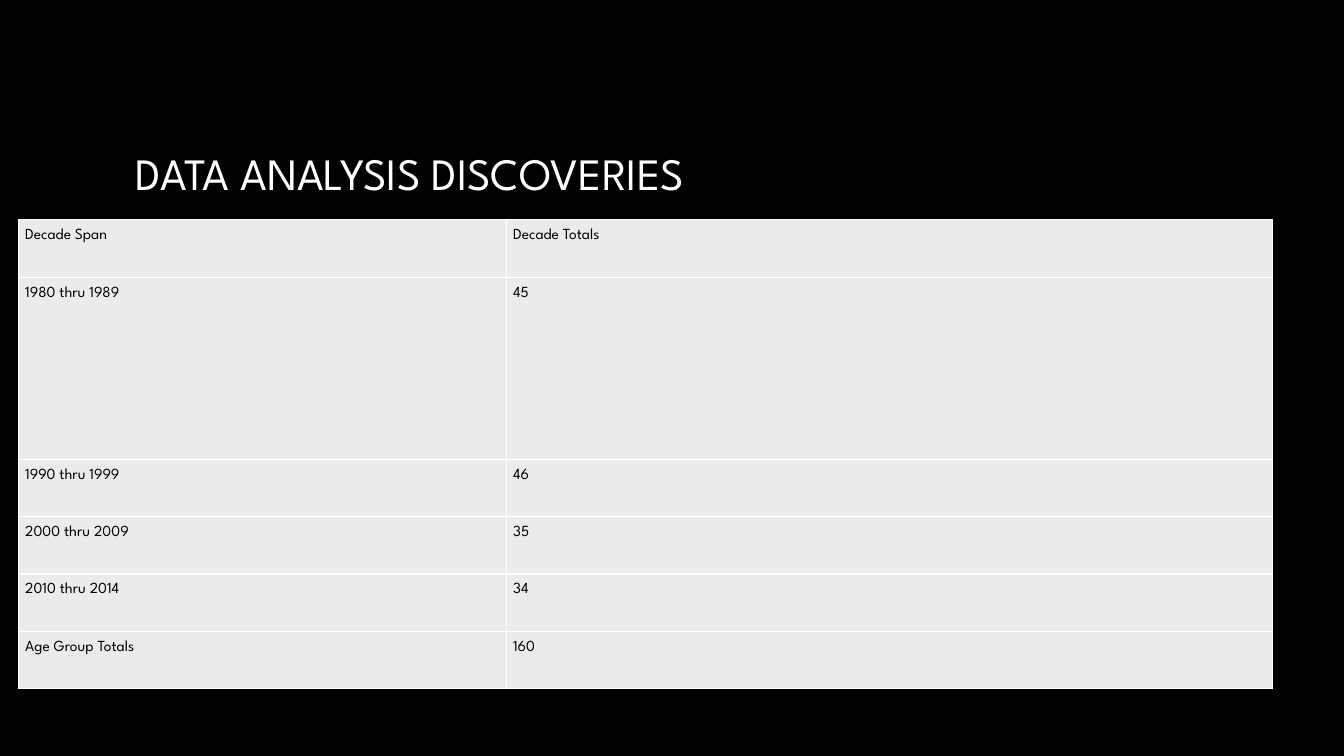
"""Build the data analysis discoveries slide with its table of decade totals."""
from dataclasses import dataclass

from lxml import etree
from pptx import Presentation
from pptx import util as u
from pptx.dml import color
from pptx.enum import text
from pptx.oxml import ns
from pptx.slide import Slide
from pptx.table import _Cell

BLACK = color.RGBColor(0x00, 0x00, 0x00)
WHITE = color.RGBColor(0xFF, 0xFF, 0xFF)
SILVER = color.RGBColor(0xA6, 0xA6, 0xA6)
CELL_GREY = color.RGBColor(0xEB, 0xEB, 0xEB)
FONT = "League Spartan"
COL_WIDTHS = (348.5, 547.2)
INSET = u.Pt(5)
BORDER = u.Pt(1)


@dataclass(frozen=True)
class DecadeRow:
    span: str
    total: str
    height: float = 41


ROWS = (
    DecadeRow("Decade Span", "Decade Totals"),
    DecadeRow("1980 thru 1989", "45", 130),
    DecadeRow("1990 thru 1999", "46"),
    DecadeRow("2000 thru 2009", "35"),
    DecadeRow("2010 thru 2014", "34"),
    DecadeRow("Age Group Totals", "160"),
)


def add_title(s: Slide, title: str) -> None:
    tf = s.shapes.add_textbox(u.Pt(90), u.Pt(48), u.Pt(780), u.Pt(150)).text_frame
    tf.word_wrap = True
    tf.vertical_anchor = text.MSO_ANCHOR.MIDDLE
    r = tf.paragraphs[0].add_run()
    r.text = title
    r.font.name = FONT
    r.font.size = u.Pt(32)
    fill = r.font.fill
    fill.gradient()
    fill.gradient_angle = 267
    for stop, rgb in zip(fill.gradient_stops, (WHITE, SILVER)):
        stop.color.rgb = rgb


def add_borders(cell: _Cell) -> None:
    tc_pr = cell._tc.get_or_add_tcPr()
    for i, side in enumerate(("lnL", "lnR", "lnT", "lnB")):
        ln = etree.Element(ns.qn(f"a:{side}"), w=str(BORDER))
        fill = etree.SubElement(ln, ns.qn("a:solidFill"))
        etree.SubElement(fill, ns.qn("a:srgbClr"), val=str(WHITE))
        tc_pr.insert(i, ln)


def fill_cell(cell: _Cell, label: str) -> None:
    cell.fill.solid()
    cell.fill.fore_color.rgb = CELL_GREY
    cell.margin_left = cell.margin_right = INSET
    cell.margin_top = cell.margin_bottom = INSET
    p = cell.text_frame.paragraphs[0]
    p.line_spacing = 1.15
    r = p.add_run()
    r.text = label
    r.font.name = FONT
    r.font.size = u.Pt(11)
    r.font.color.rgb = BLACK
    add_borders(cell)


def add_decade_table(s: Slide, rows: tuple[DecadeRow, ...]) -> None:
    width, height = sum(COL_WIDTHS), sum(row.height for row in rows)
    table = s.shapes.add_table(
        len(rows), len(COL_WIDTHS), u.Pt(13), u.Pt(157), u.Pt(width), u.Pt(height)
    ).table
    table.first_row = table.horz_banding = False
    for column, col_width in zip(table.columns, COL_WIDTHS):
        column.width = u.Pt(col_width)
    for i, row in enumerate(rows):
        table.rows[i].height = u.Pt(row.height)
        for j, label in enumerate((row.span, row.total)):
            fill_cell(table.cell(i, j), label)


def main() -> None:
    prs = Presentation()
    prs.slide_width, prs.slide_height = u.Pt(960), u.Pt(540)
    s = prs.slides.add_slide(prs.slide_layouts[6])
    s.background.fill.solid()
    s.background.fill.fore_color.rgb = BLACK
    add_title(s, "DATA ANALYSIS DISCOVERIES")
    add_decade_table(s, ROWS)
    prs.save("out.pptx")


if __name__ == "__main__":
    main()
